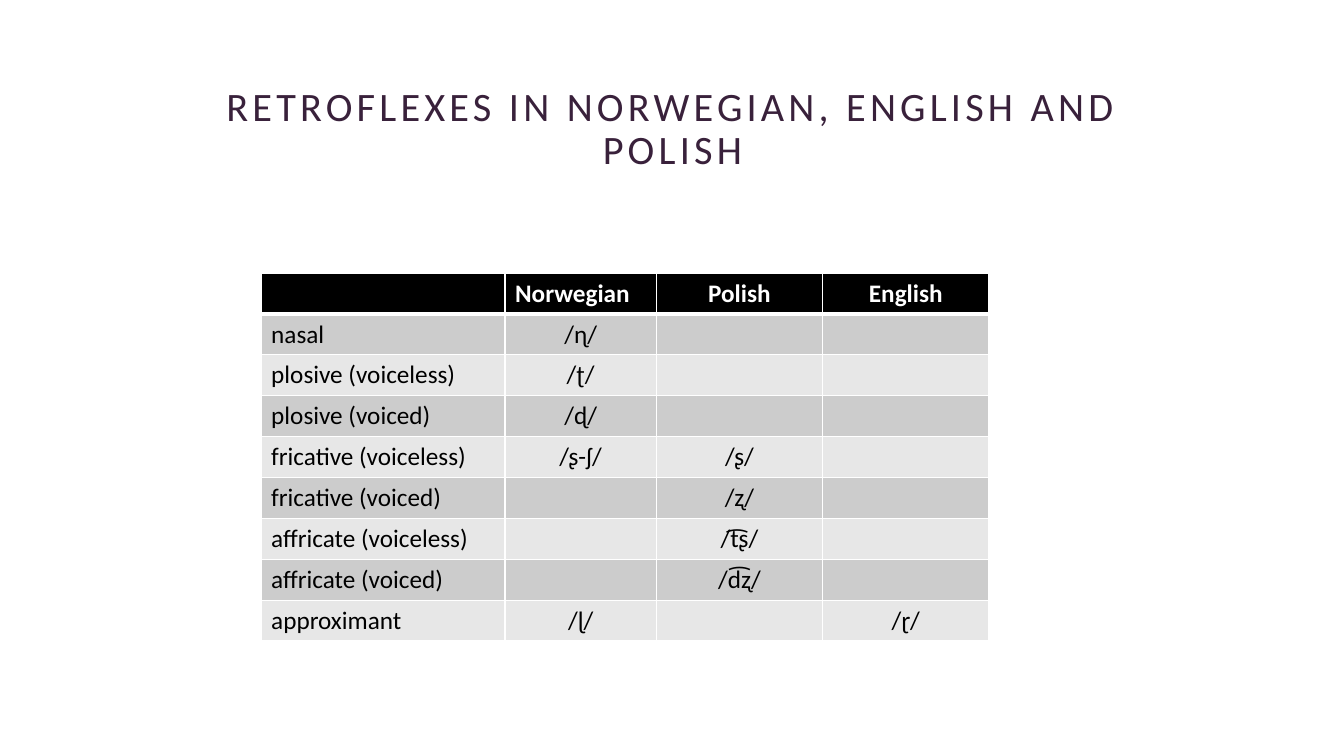
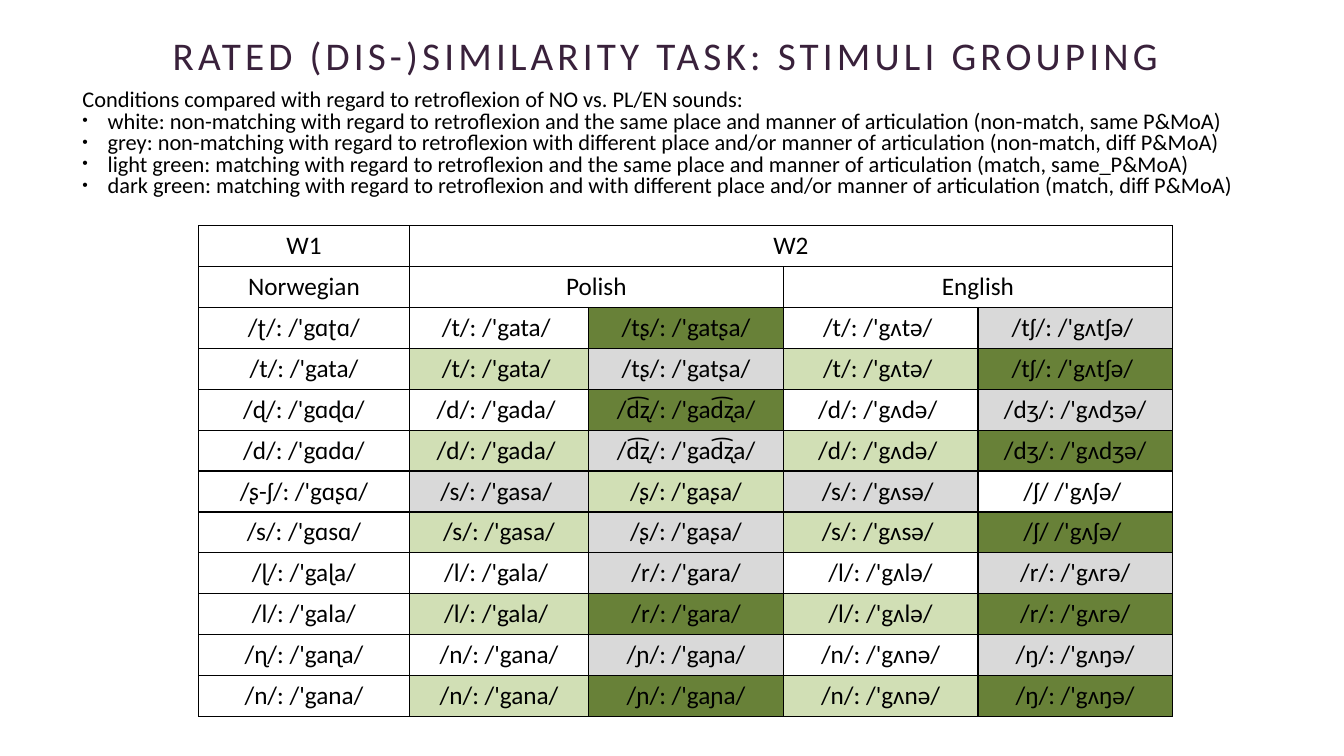
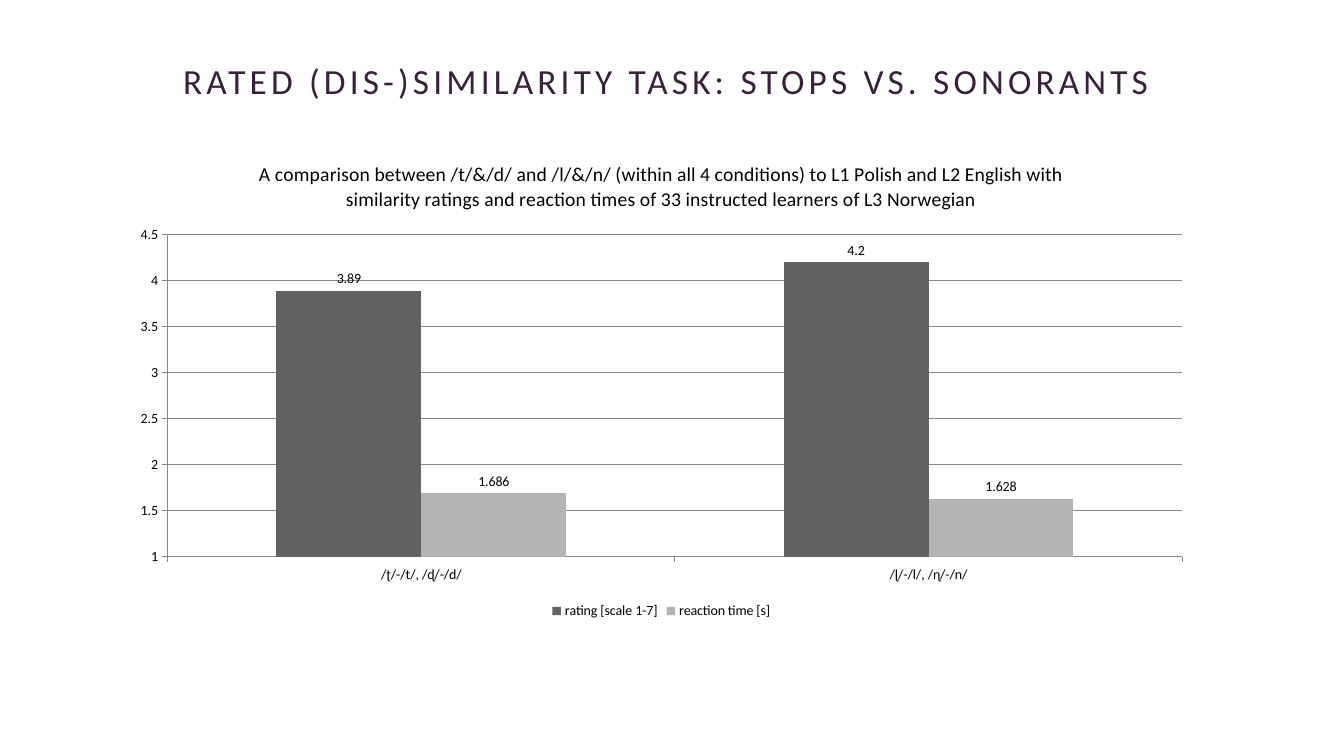
import dataclasses

import lxml.etree
import pptx
import pptx.chart.data
import pptx.dml.color
import pptx.enum.chart
import pptx.enum.text
import pptx.oxml.ns
import pptx.util


@dataclasses.dataclass(frozen=True)
class Theme:
    font: str = "Calibri"
    plum: str = "39213B"
    black: str = "000000"
    white: str = "FFFFFF"
    band_dark: str = "CCCCCC"
    band_light: str = "E7E7E7"
    grey: str = "D9D9D9"
    light_green: str = "D1DFB5"
    dark_green: str = "688138"
    rating: str = "626262"
    reaction: str = "B3B3B3"
    grid: str = "868686"
    table_size: float = 18
    body_size: float = 16
    chart_title_size: float = 14
    chart_size: float = 10


theme = Theme()
rgb = pptx.dml.color.RGBColor.from_string
qn = pptx.oxml.ns.qn
Pt = pptx.util.Pt
CENTER = pptx.enum.text.PP_ALIGN.CENTER
LEFT = pptx.enum.text.PP_ALIGN.LEFT

deck = pptx.Presentation()
deck.slide_width = pptx.util.Inches(13.33)
deck.slide_height = pptx.util.Inches(7.5)
col = deck.slide_width / 100
row = deck.slide_height / 100
TABLE_ROW = 5.41


def style_font(font, size, color, bold=False):
    font.name = theme.font
    font.size = Pt(size)
    font.bold = bold
    font.color.rgb = rgb(color)


def draw_table(slide, left, top, widths, texts, fills, border):
    table = slide.shapes.add_table(
        len(texts), len(widths), int(left * col), int(top * row),
        int(sum(widths) * col), int(len(texts) * TABLE_ROW * row)).table
    table.first_row = False
    table.horz_banding = False
    for column, width in zip(table.columns, widths):
        column.width = int(width * col)
    for r, line in enumerate(texts):
        table.rows[r].height = int(TABLE_ROW * row)
        for c, text in enumerate(line):
            cell = table.cell(r, c)
            properties = cell._tc.get_or_add_tcPr()
            for side in ("lnL", "lnR", "lnT", "lnB"):
                edge = lxml.etree.SubElement(properties, qn("a:" + side), w=str(Pt(1)))
                paint = lxml.etree.SubElement(edge, qn("a:solidFill"))
                lxml.etree.SubElement(paint, qn("a:srgbClr"), val=border)
            cell.fill.solid()
            cell.fill.fore_color.rgb = rgb(fills[r][c])
            cell.text_frame.text = text
            paragraph = cell.text_frame.paragraphs[0]
            paragraph.alignment = CENTER
            style_font(paragraph.font, theme.table_size, theme.black)
            for run in paragraph.runs:
                style_font(run.font, theme.table_size, theme.black)
    return table


titles = [
    ("RETROFLEXES IN NORWEGIAN, ENGLISH AND POLISH", 7.73, 15.87, 28.8),
    ("RATED (DIS-)SIMILARITY TASK: STIMULI GROUPING ", 2.67, 8.4, 28),
    ("RATED (DIS-)SIMILARITY TASK: STOPS VS. SONORANTS ", 5.73, 8.4, 25.2),
]
slides = []
for title, top, height, size in titles:
    slide = deck.slides.add_slide(deck.slide_layouts[6])
    slides.append(slide)
    frame = slide.shapes.add_textbox(
        int(11.1 * col), int(top * row), int(77.87 * col), int(height * row)).text_frame
    frame.word_wrap = True
    frame.vertical_anchor = pptx.enum.text.MSO_ANCHOR.BOTTOM
    frame.text = title
    heading = frame.paragraphs[0]
    heading.alignment = CENTER
    heading.line_spacing = 0.9
    style_font(heading.runs[0].font, size, theme.plum)
    heading.runs[0]._r.get_or_add_rPr().set("spc", "300")
inventory_slide, stimuli_slide, results_slide = slides

inventory = [
    ("", "Norwegian", "Polish", "English"),
    ("nasal", "/ɳ/", "", ""),
    ("plosive (voiceless)", "/ʈ/", "", ""),
    ("plosive (voiced)", "/ɖ/", "", ""),
    ("fricative (voiceless)", "/ʂ-ʃ/", "/ʂ/", ""),
    ("fricative (voiced)", "", "/ʐ/", ""),
    ("affricate (voiceless)", "", "/t͡ʂ/", ""),
    ("affricate (voiced)", "", "/d͡ʐ/", ""),
    ("approximant", "/ɭ/", "", "/ɽ/"),
]
bands = [[theme.black] * 4]
for r in range(1, len(inventory)):
    bands.append([theme.band_dark if r % 2 else theme.band_light] * 4)
retroflexes = draw_table(inventory_slide, 19.43, 36.13, (18.15, 11.25, 12.38, 12.38),
                         inventory, bands, theme.white)
for r in range(len(inventory)):
    retroflexes.cell(r, 0).text_frame.paragraphs[0].alignment = LEFT
retroflexes.cell(0, 1).text_frame.paragraphs[0].alignment = LEFT
for c in range(4):
    header = retroflexes.cell(0, c)
    for run in header.text_frame.paragraphs[0].runs:
        style_font(run.font, theme.table_size, theme.white, bold=True)
    for cell, side in ((header, "a:lnB"), (retroflexes.cell(1, c), "a:lnT")):
        cell._tc.tcPr.find(qn(side)).set("w", str(Pt(3)))

conditions = [
    "Conditions compared with regard to retroflexion of NO vs. PL/EN sounds:",
    "white: non-matching with regard to retroflexion and the same place and manner of articulation (non-match, same P&MoA)",
    "grey: non-matching with regard to retroflexion with different place and/or manner of articulation (non-match, diff P&MoA)",
    "light green: matching with regard to retroflexion and the same place and manner of articulation (match, same_P&MoA)",
    "dark green: matching with regard to retroflexion and with different place and/or manner of articulation (match, diff P&MoA)",
]
legend = stimuli_slide.shapes.add_textbox(
    int(5.4 * col), int(11.33 * row), int(91.3 * col), int(19.87 * row)).text_frame
legend.word_wrap = True
legend.text = "\n".join(conditions)
hanging = pptx.util.Inches(0.25)
for i, paragraph in enumerate(legend.paragraphs):
    paragraph.line_spacing = 0.8
    style_font(paragraph.runs[0].font, theme.body_size, theme.black)
    properties = paragraph._p.get_or_add_pPr()
    properties.set("marL", str(hanging))
    properties.set("indent", str(-hanging))
    if i:
        lxml.etree.SubElement(properties, qn("a:buSzPct"), val="70000")
        lxml.etree.SubElement(properties, qn("a:buFont"), typeface="Arial")
        lxml.etree.SubElement(properties, qn("a:buChar"), char="•")

shades = {"W": theme.white, "G": theme.grey, "L": theme.light_green, "D": theme.dark_green}
stimuli = [
    ("WWWWW", "W1", "W2", "", "", ""),
    ("WWWWW", "Norwegian", "Polish", "", "English", ""),
    ("WWDWG", "/ʈ/: /'gɑʈɑ/", "/t/: /'gata/ ", "/tʂ/: /'gatʂa/", "/t/: /'gʌtə/ ", "/tʃ/: /'gʌtʃə/ "),
    ("WLGLD", "/t/: /'gata/", "/t/: /'gata/ ", "/tʂ/: /'gatʂa/", "/t/: /'gʌtə/ ", "/tʃ/: /'gʌtʃə/ "),
    ("WWDWG", "/ɖ/: /'gɑɖɑ/", "/d/: /'gada/ ", "/d͡ʐ/: /'gad͡ʐa/", "/d/: /'gʌdə/ ", "/dʒ/: /'gʌdʒə/"),
    ("WLGLD", "/d/: /'gɑdɑ/", "/d/: /'gada/ ", "/d͡ʐ/: /'gad͡ʐa/", "/d/: /'gʌdə/ ", "/dʒ/: /'gʌdʒə/"),
    ("WGLGW", "/ʂ-ʃ/: /'gɑʂɑ/", "/s/: /'gasa/ ", "/ʂ/: /'gaʂa/", "/s/: /'gʌsə/ ", "/ʃ/ /'gʌʃə/ "),
    ("WLGLD", "/s/: /'gɑsɑ/", "/s/: /'gasa/", "/ʂ/: /'gaʂa/", "/s/: /'gʌsə/ ", "/ʃ/ /'gʌʃə/ "),
    ("WWGWG", "/ɭ/: /'gaɭa/", "/l/: /'gala/ ", "/r/: /'gara/", "/l/: /'gʌlə/", "/r/: /'gʌrə/"),
    ("WLDLD", "/l/: /'gala/", "/l/: /'gala/ ", "/r/: /'gara/", "/l/: /'gʌlə/", "/r/: /'gʌrə/"),
    ("WWGWG", "/ɳ/: /'gaɳa/", "/n/: /'gana/", "/ɲ/: /'gaɲa/", "/n/: /'gʌnə/", "/ŋ/: /'gʌŋə/"),
    ("WLDLD", "/n/: /'gana/", "/n/: /'gana/", "/ɲ/: /'gaɲa/", "/n/: /'gʌnə/", "/ŋ/: /'gʌŋə/"),
]
pairs = draw_table(stimuli_slide, 14.78, 29.87, (15.68, 13.35, 14.48, 14.48, 14.48),
                   [line[1:] for line in stimuli],
                   [[shades[code] for code in line[0]] for line in stimuli], theme.black)
for r, first, last in ((0, 1, 4), (1, 1, 2), (1, 3, 4)):
    pairs.cell(r, first).merge(pairs.cell(r, last))

scores = pptx.chart.data.CategoryChartData()
scores.categories = ["/ʈ/-/t/, /ɖ/-/d/", "/ɭ/-/l/, /ɳ/-/n/"]
scores.add_series("rating [scale 1-7]", (3.89, 4.2))
scores.add_series("reaction time [s]", (1.686, 1.628))
chart = results_slide.shapes.add_chart(
    pptx.enum.chart.XL_CHART_TYPE.COLUMN_CLUSTERED, int(8.85 * col), int(18.8 * row),
    int(80.72 * col), int(63.6 * row), scores).chart
style_font(chart.font, theme.chart_size, theme.black)
chart.has_title = True
chart.chart_title.include_in_layout = False
chart.chart_title.text_frame.text = (
    "A comparison between /t/&/d/ and /l/&/n/ (within all 4 conditions) to L1 Polish and "
    "L2 English with similarity ratings and reaction times of 33 instructed learners of L3 Norwegian")
style_font(chart.chart_title.text_frame.paragraphs[0].runs[0].font,
           theme.chart_title_size, theme.black)
chart.has_legend = True
chart.legend.position = pptx.enum.chart.XL_LEGEND_POSITION.BOTTOM
chart.legend.include_in_layout = False
ratings = chart.value_axis
ratings.minimum_scale, ratings.maximum_scale, ratings.major_unit = 1, 4.5, 0.5
ratings.has_major_gridlines = True
for line in (ratings.major_gridlines.format.line, ratings.format.line,
             chart.category_axis.format.line):
    line.color.rgb = rgb(theme.grid)
    line.width = Pt(0.75)
for axis in (ratings, chart.category_axis):
    axis.major_tick_mark = pptx.enum.chart.XL_TICK_MARK.OUTSIDE
plot = chart.plots[0]
plot.gap_width = 150
plot.overlap = 0
plot.vary_by_categories = False
for series, color in zip(plot.series, (theme.rating, theme.reaction)):
    series.format.fill.solid()
    series.format.fill.fore_color.rgb = rgb(color)
    series.data_labels.show_value = True
    series.data_labels.position = pptx.enum.chart.XL_LABEL_POSITION.OUTSIDE_END

deck.save("out.pptx")
